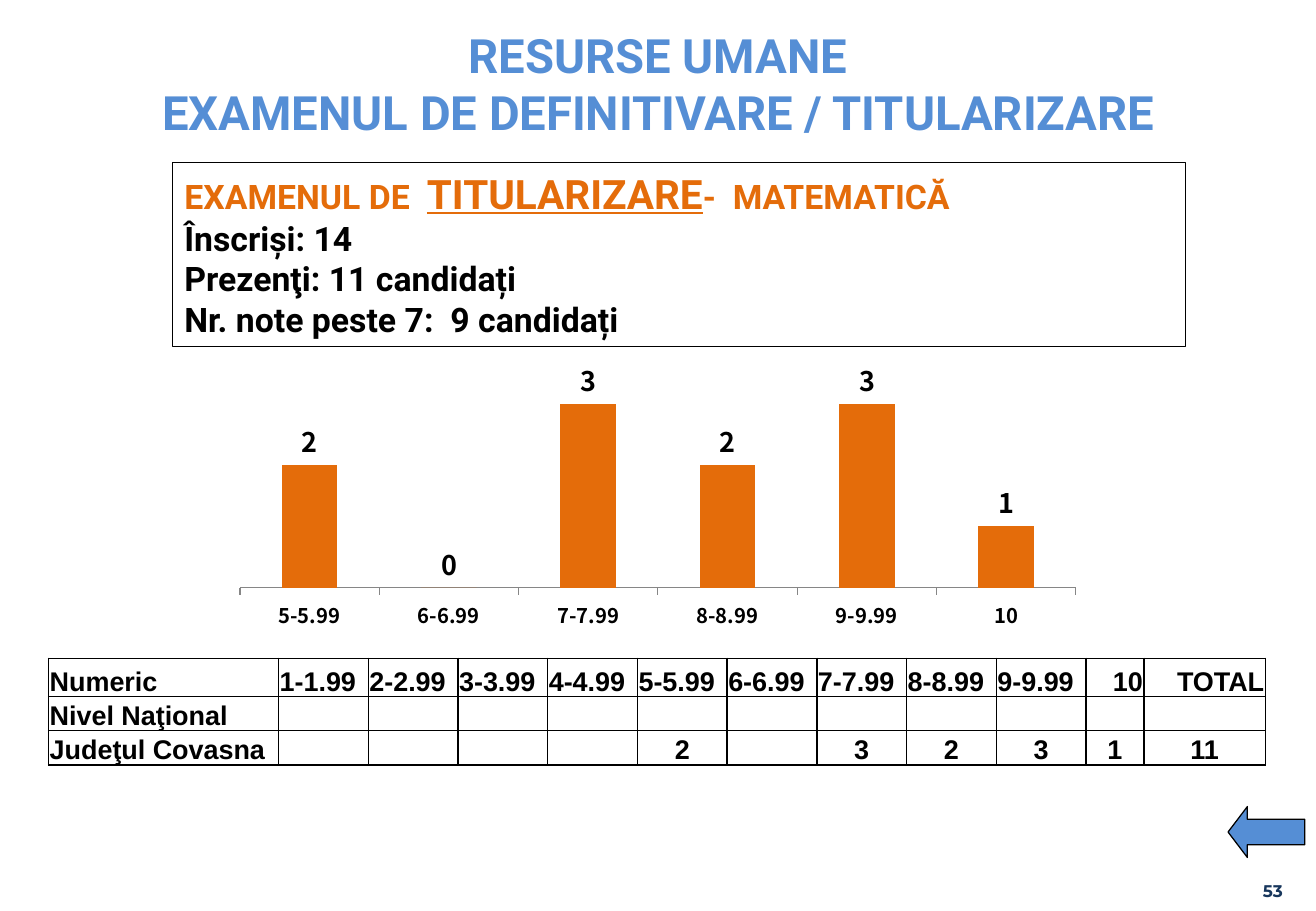
from pptx import Presentation
from pptx.chart.data import CategoryChartData as ChartData
from pptx.dml.color import RGBColor as RGB
from pptx.enum.chart import XL_CHART_TYPE as Kind, XL_LABEL_POSITION as Spot
from pptx.enum.chart import XL_TICK_MARK as Tick
from pptx.enum.shapes import MSO_SHAPE as Form
from pptx.enum.text import MSO_ANCHOR as Anchor, PP_ALIGN as Align
from pptx.oxml import parse_xml
from pptx.oxml.ns import nsdecls
from pptx.util import Pt

HUES = {"blue": "558ED5", "orange": "E46C0A", "navy": "17365C",
        "black": "000000", "grey": "868686"}
BANDS = [f"{n}-{n}.99" for n in range(1, 10)] + ["10"]
MARKS = [2, 0, 3, 2, 3, 1]  # from the band 5-5.99 up


def hue(name):
    return RGB.from_string(HUES[name])


def style(font, color, **form):
    for key, value in {"bold": True, **form}.items():
        setattr(font, key, value)
    font.color.rgb = hue(color)


def write(para, text, color, size, name="Roboto", **form):
    """Add one run; a vertical tab in the text is a line break."""
    for i, part in enumerate(text.split("\v")):
        if i:
            para.add_line_break()
        run = para.add_run()
        run.text = part
        style(run.font, color, size=Pt(size), name=name, **form)


def set_frame(frame, **form):
    for key, value in {"word_wrap": True, **form}.items():
        setattr(frame, key, value)


def add_label(slide, box, text, color, size, name, align, **form):
    frame = slide.shapes.add_textbox(*map(Pt, box)).text_frame
    set_frame(frame, **form)
    para = frame.paragraphs[0]
    para.alignment = align
    write(para, text, color, size, name)


def add_form(slide, kind, box, fill=None):
    shape = slide.shapes.add_shape(kind, *map(Pt, box))
    shape.shadow.inherit = False
    if fill:
        shape.fill.solid()
        shape.fill.fore_color.rgb = hue(fill)
    else:
        shape.fill.background()
    shape.line.color.rgb = hue("black")
    shape.line.width = Pt(0.75)
    return shape


def add_facts(slide, box, lines):
    frame = add_form(slide, Form.RECTANGLE, box).text_frame
    set_frame(frame, vertical_anchor=Anchor.TOP)
    for i, runs in enumerate(lines):
        para = frame.add_paragraph() if i else frame.paragraphs[0]
        para.alignment = Align.LEFT
        for text, color, size, line in runs:
            write(para, text, color, size, underline=line)


def add_bars(slide, box):
    data = ChartData()
    data.categories = BANDS[4:]
    data.add_series("Series 1", MARKS)
    chart = slide.shapes.add_chart(
        Kind.COLUMN_CLUSTERED, *map(Pt, box), data).chart
    chart.has_legend = chart.has_title = False
    face = "Noto Sans CJK KR"
    style(chart.font, "black", size=Pt(12), name=face)

    # Axes
    chart.value_axis.visible = False
    chart.value_axis.has_major_gridlines = False
    chart.value_axis.minimum_scale = 0
    chart.value_axis.maximum_scale = 3.5
    chart.category_axis.major_tick_mark = Tick.OUTSIDE
    chart.category_axis.format.line.color.rgb = hue("grey")

    # Bars and their values
    plot = chart.plots[0]
    plot.gap_width = 150
    plot.vary_by_categories = False
    fill = plot.series[0].format.fill
    fill.solid()
    fill.fore_color.rgb = hue("orange")
    plot.has_data_labels = True
    labels = plot.data_labels
    labels.show_value = True
    labels.position = Spot.OUTSIDE_END
    style(labels.font, "black", size=Pt(16), name=face)

    # Inner plot area
    area = chart.plots[0]._element.getparent()
    for old in area.findall("{*}layout"):
        area.remove(old)
    rule = {"layoutTarget": "inner", "xMode": "edge", "yMode": "edge",
            "x": 0.03, "y": 0.1, "w": 0.96, "h": 0.73}
    body = "".join(f'<c:{k} val="{v}"/>' for k, v in rule.items())
    area.insert(0, parse_xml(
        f'<c:layout {nsdecls("c")}><c:manualLayout>{body}'
        '</c:manualLayout></c:layout>'))


def fill_cell(cell, text, align):
    for side in ("left", "right", "top"):
        setattr(cell, f"margin_{side}", Pt(0.7))
    cell.margin_bottom = 0
    cell.vertical_anchor = Anchor.BOTTOM
    props = cell._tc.get_or_add_tcPr()
    for side in "LRTB":
        props.append(parse_xml(
            f'<a:ln{side} {nsdecls("a")} w="12700"><a:solidFill>'
            f'<a:srgbClr val="{HUES["black"]}"/></a:solidFill></a:ln{side}>'))
    cell.fill.background()
    para = cell.text_frame.paragraphs[0]
    para.alignment = align
    if text:
        write(para, text, "black", 16, "Arial")
    else:
        para._p.append(parse_xml(
            f'<a:endParaRPr {nsdecls("a")} sz="1600"/>'))


def add_grid(slide, box, rows, widths, heights):
    grid = slide.shapes.add_table(
        len(rows), len(widths), *map(Pt, box)).table
    grid.first_row = grid.horz_banding = False
    for col, width in zip(grid.columns, widths):
        col.width = Pt(width)
    for row, height in zip(grid.rows, heights):
        row.height = Pt(height)
    for r, row in enumerate(rows):
        for c, text in enumerate(row):
            align = Align.LEFT
            if c and r:
                align = Align.CENTER
            elif c > 9:
                align = Align.RIGHT
            fill_cell(grid.cell(r, c), text, align)


def main():
    deck = Presentation()
    deck.slide_width, deck.slide_height = Pt(780), Pt(540)
    slide = deck.slides.add_slide(deck.slide_layouts[6])

    # Title and page number
    add_label(slide, (0, 18, 780, 62.6),
              "RESURSE UMANE\vEXAMENUL DE DEFINITIVARE / TITULARIZARE",
              "blue", 28, "Roboto", Align.CENTER,
              vertical_anchor=Anchor.MIDDLE)
    flat = {f"margin_{s}": 0 for s in ("left", "right", "top", "bottom")}
    add_label(slide, (695.5, 505.4, 64.8, 28.8), "53", "navy", 10,
              "Montserrat", Align.RIGHT, vertical_anchor=Anchor.BOTTOM, **flat)

    # Exam facts
    facts = ["Înscriși: 14", "Prezenţi: 11 candidați",
             "Nr. note peste 7:  9 candidați"]
    head = [("EXAMENUL DE  ", "orange", 20, False),
            ("TITULARIZARE", "orange", 24, True),
            ("-  MATEMATICĂ", "orange", 20, False)]
    add_facts(slide, (102.2, 96.5, 600.5, 108.7),
              [head] + [[(fact, "black", 20, False)] for fact in facts])

    # Back arrow
    arrow = add_form(slide, Form.LEFT_ARROW, (727.9, 478.1, 45.4, 30.2), "blue")
    arrow.adjustments[1] = 0.38

    # Marks as bars and as a table
    add_bars(slide, (126.7, 203.8, 516.2, 174.2))
    county = [str(n) if n else "" for n in MARKS]
    rows = [["Numeric", *BANDS, "TOTAL"],
            ["Nivel Naţional"] + [""] * 11,
            ["Judeţul Covasna"] + [""] * 4 + county + [str(sum(MARKS))]]
    add_grid(slide, (28.8, 390.2, 720, 63.2), rows,
             [136.3] + [53.2] * 9 + [34.3, 72], [22.8, 20.2, 20.2])

    deck.save("out.pptx")


if __name__ == "__main__":
    main()
